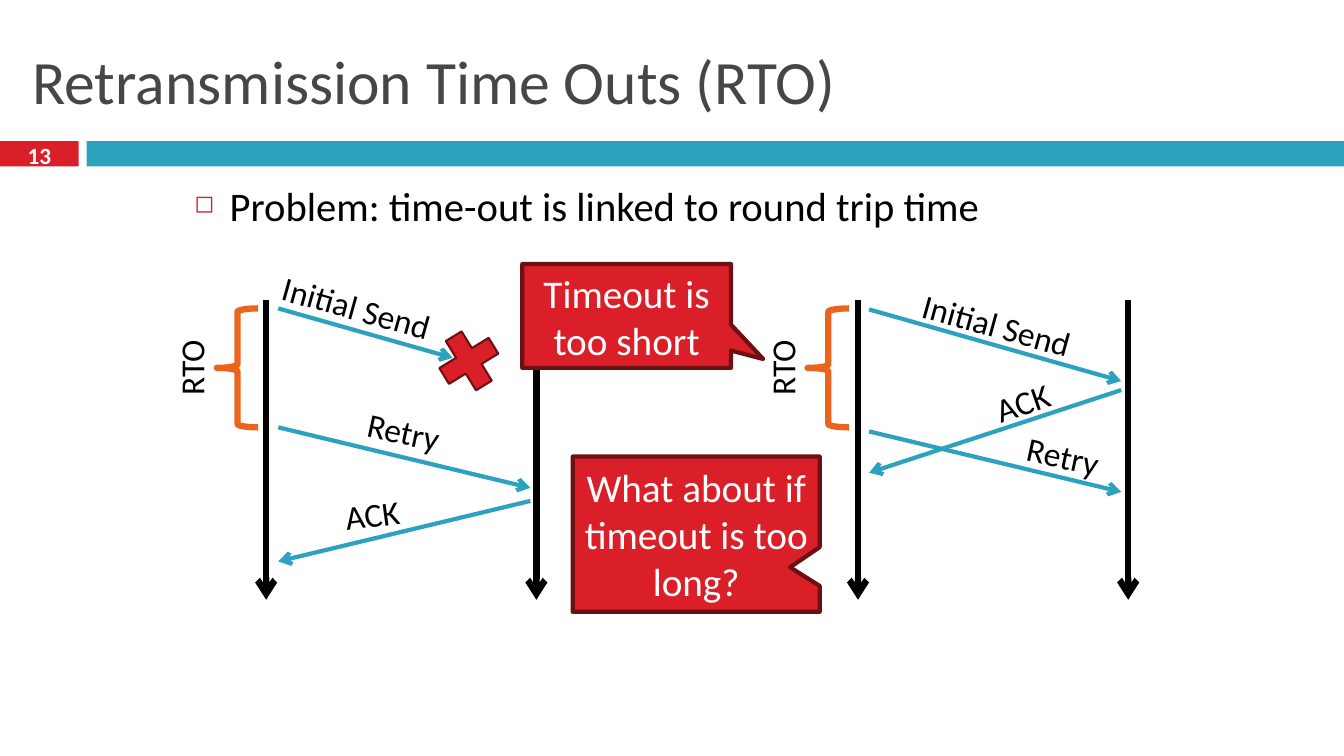
from lxml import etree
from pptx import Presentation
from pptx.dml.color import RGBColor
from pptx.enum.shapes import MSO_CONNECTOR as CONNECTOR, MSO_SHAPE as SHAPE
from pptx.enum.text import MSO_ANCHOR as ANCHOR, PP_ALIGN as ALIGN
from pptx.oxml.ns import qn
from pptx.util import Inches, Pt

RED = RGBColor(0xDA, 0x1F, 0x28)
DARK_RED = RGBColor(0x6D, 0x10, 0x14)
TEAL = RGBColor(0x2D, 0xA2, 0xBF)
ORANGE = RGBColor(0xEB, 0x64, 0x1B)
GRAY = RGBColor(0x46, 0x46, 0x46)
BLACK = RGBColor(0, 0, 0)
WHITE = RGBColor(255, 255, 255)
FONT = "Calibri"

TITLE = "Retransmission Time Outs (RTO)"
PAGE = "13"
PROBLEM = "Problem: time-out is linked to round trip time"
BARS = [((0, 1.4, 0.78, 0.25), RED), ((0.86, 1.4, 12.47, 0.25), TEAL)]

DIAGRAMS = [
    {
        "sender": 2.64, "receiver": 5.32, "brace": 2.15,
        "messages": [
            ("Initial Send", (2.76, 3.06, 4.49, 3.55), (2.44, 2.8, 2.19), 15.6),
            ("ACK", (5.26, 4.97, 2.76, 5.57), (3.3, 4.85, 0.78), -7.8),
            ("Retry", (2.76, 4.24, 5.26, 4.84), (3.45, 4.03, 1.11), 12.3),
        ],
    },
    {
        "sender": 8.51, "receiver": 11.19, "brace": 8.01,
        "messages": [
            ("Initial Send", (8.62, 3.07, 11.12, 3.78), (8.79, 2.97, 2.19), 15.6),
            ("ACK", (11.12, 3.87, 8.62, 4.69), (9.56, 3.74, 1.16), -19),
            ("Retry", (8.62, 4.28, 11.12, 4.88), (9.99, 4.27, 1.11), 12.3),
        ],
    },
]
LOSS_MARK = (4.26, 3.19, 0.78, 0.78)
CALLOUTS = [
    ("Timeout is too short", (5.18, 2.62, 2.07, 1.03), (0.655, 0.415)),
    ("What about if timeout is too long?", (5.68, 4.53, 2.45, 1.54), (0.38, 0.213)),
]
LIFE_TOP, LIFE_BOTTOM = 2.98, 5.95
BRACE_TOP, BRACE_W, BRACE_H = 3.06, 0.41, 1.18
LABEL_H, RTO_W, RTO_SHIFT = 0.5, 1.07, 0.79


def inches(values):
    return [Inches(v) for v in values]


def write(tf, text, size, color, align=ALIGN.CENTER, anchor=ANCHOR.TOP, bold=False):
    tf.word_wrap = True
    tf.vertical_anchor = anchor
    p = tf.paragraphs[0]
    p.alignment = align
    r = p.add_run()
    r.text = text
    r.font.name = FONT
    r.font.size = Pt(size)
    r.font.bold = bold
    r.font.color.rgb = color
    return p


def add_text(s, box, text, size, color, rotation=0, **style):
    tb = s.shapes.add_textbox(*inches(box))
    tb.rotation = rotation
    return write(tb.text_frame, text, size, color, **style)


def add_shape(s, kind, box, fill=None, line=None, width=0):
    sp = s.shapes.add_shape(kind, *inches(box))
    sp.shadow.inherit = False
    if fill is None:
        sp.fill.background()
    else:
        sp.fill.solid()
        sp.fill.fore_color.rgb = fill
    if line is None:
        sp.line.fill.background()
    else:
        sp.line.color.rgb = line
        sp.line.width = Pt(width)
    return sp


def add_arrow(s, ends, color, width):
    cx = s.shapes.add_connector(CONNECTOR.STRAIGHT, *inches(ends))
    cx.line.color.rgb = color
    cx.line.width = Pt(width)
    etree.SubElement(cx.line._get_or_add_ln(), qn("a:tailEnd"), type="arrow")
    etree.SubElement(cx._element.spPr, qn("a:effectLst"))


def add_bullet(p, indent):
    pPr = p._p.get_or_add_pPr()
    pPr.set("marL", str(Inches(indent)))
    pPr.set("indent", str(-Inches(indent)))
    color = etree.SubElement(pPr, qn("a:buClr"))
    etree.SubElement(color, qn("a:srgbClr"), val=str(RED))
    etree.SubElement(pPr, qn("a:buSzPct"), val="60000")
    etree.SubElement(pPr, qn("a:buChar"), char="◻")


def add_diagram(s, diagram):
    for x in (diagram["sender"], diagram["receiver"]):
        add_arrow(s, (x, LIFE_TOP, x, LIFE_BOTTOM), BLACK, 4.5)
    for text, ends, label, rotation in diagram["messages"]:
        add_arrow(s, ends, TEAL, 3)
        add_text(s, (*label, LABEL_H), text, 24, BLACK, rotation)
    x = diagram["brace"]
    add_shape(s, SHAPE.LEFT_BRACE, (x, BRACE_TOP, BRACE_W, BRACE_H), line=ORANGE, width=4.5)
    rto_top = BRACE_TOP + (BRACE_H - LABEL_H) / 2
    add_text(s, (x - RTO_SHIFT, rto_top, RTO_W, LABEL_H), "RTO", 24, BLACK, 270)


def main():
    prs = Presentation()
    prs.slide_width, prs.slide_height = Inches(13.33), Inches(7.5)
    s = prs.slides.add_slide(prs.slide_layouts[5])

    for box, color in BARS:
        add_shape(s, SHAPE.RECTANGLE, box, color)
    title = s.shapes.title
    title.left, title.top, title.width, title.height = inches((0.22, 0.25, 12.89, 1.08))
    write(title.text_frame, TITLE, 44, GRAY, ALIGN.LEFT, ANCHOR.MIDDLE)
    add_text(s, (0, 1.37, 0.78, 0.33), PAGE, 16.6, WHITE, anchor=ANCHOR.MIDDLE, bold=True)
    p = add_text(s, (1.83, 1.75, 9.67, 1.82), PROBLEM, 29, BLACK, align=ALIGN.LEFT)
    p.space_before = Pt(7)
    add_bullet(p, 0.35)

    for diagram in DIAGRAMS:
        add_diagram(s, diagram)
    add_shape(s, SHAPE.MATH_MULTIPLY, LOSS_MARK, RED, DARK_RED, 1.5).rotation = 13.5
    for text, box, tip in CALLOUTS:
        sp = add_shape(s, SHAPE.RECTANGULAR_CALLOUT, box, RED, DARK_RED, 3)
        sp.adjustments[0], sp.adjustments[1] = tip
        write(sp.text_frame, text, 28, WHITE, anchor=ANCHOR.MIDDLE)

    prs.save("out.pptx")


if __name__ == "__main__":
    main()
